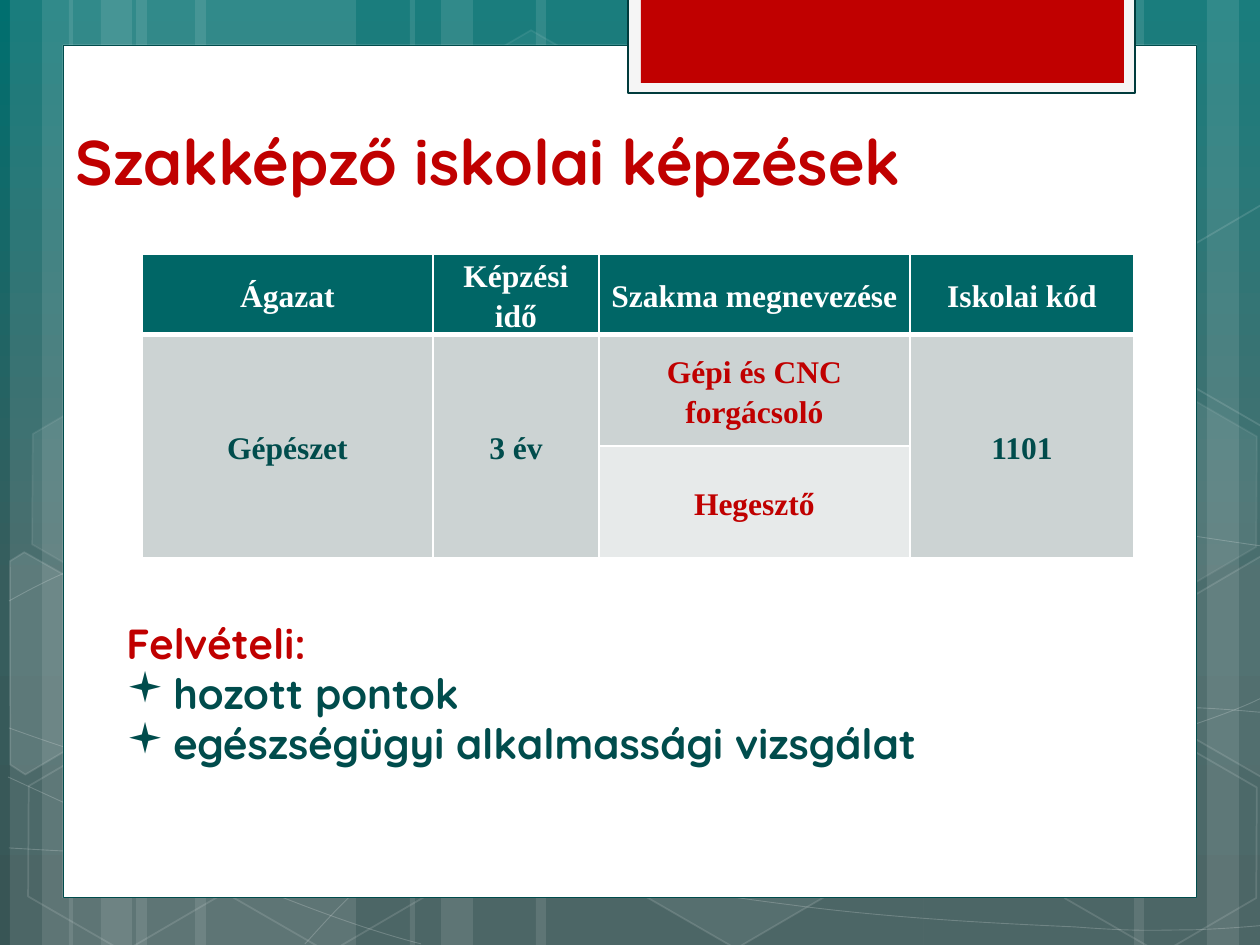
"""Build the slide on vocational school courses."""
from copy import deepcopy
from math import cos, radians, sin
from lxml.etree import SubElement
from pptx import Presentation
from pptx.dml.color import RGBColor
from pptx.enum.shapes import MSO_SHAPE as Preset
from pptx.enum.text import MSO_ANCHOR as Anchor, MSO_AUTO_SIZE as AutoSize, PP_ALIGN as Align
from pptx.oxml.ns import qn
from pptx.util import Inches, Pt

PX = 7257
TILT = 30
WHITE, RED, TEAL, GRAY = "FFFFFF", "C00000", "004C4C", "CCD3D3"


def paint(shape, fill=WHITE, fill_opacity=100, line=WHITE, line_opacity=0, weight=1):
    shape.shadow.inherit = False
    shape.line.width = Pt(weight)
    for style, color, opacity in ((shape.fill, fill, fill_opacity), (shape.line.fill, line, line_opacity)):
        if opacity == 0:
            style.background()
            continue
        style.solid()
        style.fore_color.rgb = RGBColor.from_string(color)
        if opacity < 100:
            solid = style._xPr.find(qn("a:solidFill"))
            SubElement(solid[0], qn("a:alpha"), val=str(opacity * 1000))


def write(para, text, size, font, color):
    span = para.add_run()
    span.text = text
    span.font.size = Pt(size)
    span.font.name = font
    span.font.bold = True
    span.font.color.rgb = RGBColor.from_string(color)


deck = Presentation()
deck.slide_width, deck.slide_height = Inches(10), Inches(7.5)
page = deck.slides.add_slide(deck.slide_layouts[5])
shapes = page.shapes

backdrop = page.background.fill
backdrop.gradient()
backdrop.gradient_angle = 270
stop_list = page._element.find(".//" + qn("a:gsLst"))
stop_list.append(deepcopy(stop_list[0]))
for stop, (position, color) in zip(backdrop.gradient_stops, [(0, "006F6F"), (0.62, "375D5D"), (1, "385555")]):
    stop.position = position
    stop.color.rgb = RGBColor.from_string(color)

stripes = [(136, 220), (10, 63), (42, 105), (195, 220), (69, 63), (101, 105),
           (924, 220), (1207, 63), (1134, 105), (536, 388), (410, 63), (441, 105)]
for left, width in stripes:
    stripe = shapes.add_shape(Preset.RECTANGLE, left * PX, 0, width * PX, 945 * PX)
    paint(stripe, fill_opacity=10)

waves = [
    [(9, 848), (77, 852), (145, 856), (239, 854), (334, 853), (451, 850), (577, 838),
     (703, 825), (882, 801), (998, 777), (1113, 753), (1231, 716), (1269, 694)],
    [(9, 601), (45, 581), (82, 562), (152, 543), (224, 524), (326, 496), (437, 488),
     (549, 479), (685, 478), (824, 488), (963, 498), (1193, 537), (1269, 547)],
    [(8, 777), (160, 847), (311, 916), (421, 944)],
    [(9, 728), (48, 742), (88, 756), (161, 776), (234, 795), (344, 827), (450, 848),
     (554, 869), (687, 892), (791, 905), (896, 919), (1008, 924), (1075, 927),
     (1140, 932), (1158, 930), (1191, 930), (1223, 929), (1246, 927), (1269, 925)],
    [(305, 944), (328, 919), (350, 893), (381, 871), (411, 848), (454, 823), (489, 805),
     (524, 788), (546, 780), (592, 767), (638, 754), (722, 737), (766, 728),
     (811, 719), (818, 719), (857, 717), (896, 713), (958, 709), (1000, 708),
     (1045, 707), (1116, 708), (1116, 708), (1116, 708), (1201, 708), (1201, 708),
     (1223, 709), (1245, 711), (1256, 712), (1268, 713), (1264, 712), (1268, 713)],
]
for points in waves:
    builder = shapes.build_freeform(*points[0], scale=PX)
    builder.add_line_segments(points[1:], close=False)
    wave = builder.convert_to_shape()
    outline = wave._element.find(".//" + qn("a:path"))
    segments = outline.findall(qn("a:lnTo"))
    for first in range(0, len(segments), 3):
        curve = SubElement(outline, qn("a:cubicBezTo"))
        for segment in segments[first:first + 3]:
            curve.append(segment[0])
            outline.remove(segment)
    paint(wave, fill_opacity=0, line_opacity=20, weight=0.5)

hexagons = [(421, 45, 4, 8), (626, 742, 6, 12), (14, 745, 0, 12), (18, 393, 7, 8),
            (219, 746, 0, 12), (949, 571, 10, 12), (1051, 747, 0, 12), (1051, 396, 7, 8)]
for left, top, fill_opacity, line_opacity in hexagons:
    hexagon = shapes.add_shape(Preset.HEXAGON, left * PX, top * PX, 220 * PX, 192 * PX)
    hexagon.adjustments[0] = 0.285
    hexagon.rotation = TILT
    paint(hexagon, fill_opacity=fill_opacity, line_opacity=line_opacity)

left_cut = [(10, 561), (24, 552), (121, 607), (120, 718), (25, 774), (10, 765)]
right_cut = [(1167, 611), (1261, 556), (1271, 562), (1271, 772), (1263, 777), (1167, 722)]
upper_cut = [(x, y - 351) for x, y in right_cut]
cosine, sine = cos(radians(TILT)), sin(radians(TILT))
for corners, center_x, center_y, fill_opacity in (
        (left_cut, 45, 674, 10), (right_cut, 1241, 655, 4), (upper_cut, 1241, 304, 0)):
    offsets = [(x - center_x, y - center_y) for x, y in corners]
    level = [(center_x + x * cosine + y * sine, center_y + y * cosine - x * sine) for x, y in offsets]
    builder = shapes.build_freeform(*level[0], scale=PX)
    builder.add_line_segments(level[1:], close=True)
    cut = builder.convert_to_shape()
    cut.rotation = TILT
    paint(cut, fill_opacity=fill_opacity, line_opacity=12)

panels = [(63, 45, 1134, 853, WHITE, TEAL, 100, 0.5),
          (628, -3, 507, 96, "F5F5F5", "003B3C", 100, 1.25),
          (641, -3, 483, 86, RED, RED, 0, 1)]
for left, top, width, height, fill, line, line_opacity, weight in panels:
    panel = shapes.add_shape(Preset.RECTANGLE, left * PX, top * PX, width * PX, height * PX)
    paint(panel, fill, 100, line, line_opacity, weight)

title = shapes.title
title._element.getparent().append(title._element)
title.left, title.top, title.width, title.height = 63 * PX, 38 * PX, 1134 * PX, 166 * PX
title.text_frame.vertical_anchor = Anchor.BOTTOM
para = title.text_frame.paragraphs[0]
para.alignment = Align.LEFT
write(para, "Szakképző iskolai képzések", 36, "Quicksand", RED)

widths, heights = [291, 166, 311, 224], [52, 112, 112]
frame = shapes.add_table(3, 4, 142 * PX, 254 * PX, sum(widths) * PX, sum(heights) * PX)
table = frame.table
table.horz_banding = False
for column, width in zip(table.columns, widths):
    column.width = width * PX
for row, height in zip(table.rows, heights):
    row.height = height * PX
frame.height = 307 * PX

rows = [["Ágazat", "Képzési idő", "Szakma megnevezése", "Iskolai kód"],
        ["Gépészet", "3 év", "Gépi és CNC forgácsoló", "1101"],
        ["", "", "Hegesztő", ""]]
for r, texts in enumerate(rows):
    for c, text in enumerate(texts):
        cell = table.cell(r, c)
        cell.fill.solid()
        fill = "006666" if r == 0 else "E7EAEA" if (r, c) == (2, 2) else GRAY
        cell.fill.fore_color.rgb = RGBColor.from_string(fill)
        cell.vertical_anchor = Anchor.MIDDLE
        cell.margin_left = cell.margin_right = 9 * PX
        cell.margin_top = cell.margin_bottom = 0
        if r == 0:
            properties = cell._tc.get_or_add_tcPr()
            for order, (side, weight) in enumerate([("lnL", 1), ("lnR", 1), ("lnT", 1), ("lnB", 3)]):
                border = SubElement(properties, qn("a:" + side), w=str(Pt(weight)))
                solid = SubElement(border, qn("a:solidFill"))
                SubElement(solid, qn("a:srgbClr"), val=WHITE)
                properties.insert(order, border)
        if text:
            para = cell.text_frame.paragraphs[0]
            para.alignment = Align.CENTER
            para.line_spacing = 1.15
            color = WHITE if r == 0 else RED if c == 2 else TEAL
            write(para, text, 18, "Times New Roman", color)
for c in (0, 1, 3):
    table.cell(1, c).merge(table.cell(2, c))

box = shapes.add_textbox(114 * PX, 611 * PX, 1048 * PX, 165 * PX)
box.text_frame.word_wrap = True
box.text_frame.auto_size = AutoSize.SHAPE_TO_FIT_TEXT
para = box.text_frame.paragraphs[0]
write(para, "Felvételi:", 24, "Quicksand", RED)
for text in ("hozott pontok", "egészségügyi alkalmassági vizsgálat"):
    para = box.text_frame.add_paragraph()
    properties = para._p.get_or_add_pPr()
    properties.set("marL", str(47 * PX))
    properties.set("indent", str(-47 * PX))
    SubElement(properties, qn("a:buFont"), typeface="Wingdings")
    SubElement(properties, qn("a:buChar"), char="▪")
    write(para, text, 24, "Quicksand", TEAL)

deck.save("out.pptx")
